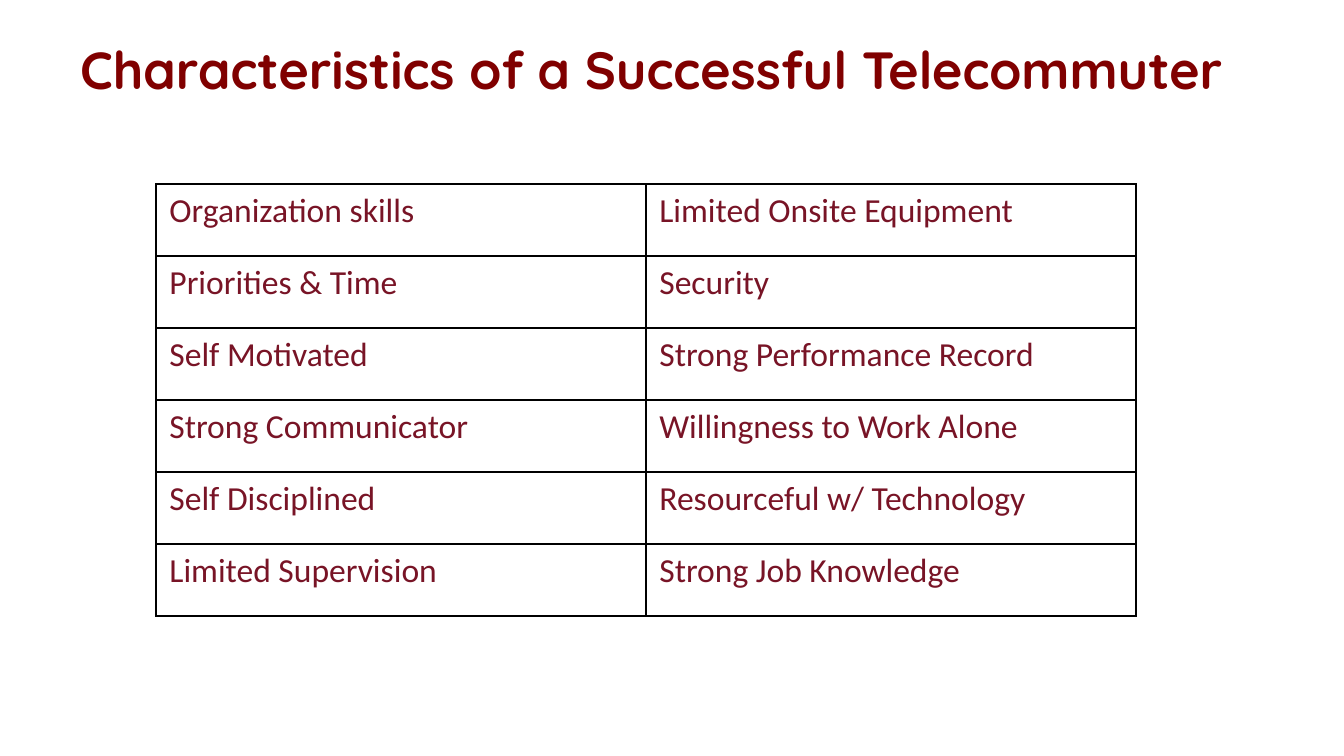
from lxml import etree
from pptx import Presentation
from pptx import util as u
from pptx.dml.color import RGBColor
from pptx.enum import text
from pptx.oxml.ns import qn

PX = 914400 / 134.4
COLORS = {"background": "FFFFFF", "title": "800000", "trait": "781426", "border": "000000"}
TRAITS = [
    ("Organization skills", "Limited Onsite Equipment"),
    ("Priorities & Time", "Security"),
    ("Self Motivated", "Strong Performance Record"),
    ("Strong Communicator", "Willingness to Work Alone"),
    ("Self Disciplined", "Resourceful w/ Technology"),
    ("Limited Supervision", "Strong Job Knowledge"),
]
COLUMN_WIDTH, ROW_HEIGHT = 490, 72


def px(length):
    return u.Emu(round(length * PX))


def color(name):
    return RGBColor.from_string(COLORS[name])


def add_run(paragraph, words, font_name, size, color_name, bold=False):
    run = paragraph.add_run()
    run.text = words
    run.font.name = font_name
    run.font.size = u.Pt(size)
    run.font.bold = bold
    run.font.color.rgb = color(color_name)


def add_title(slide, words):
    title = slide.shapes.add_textbox(px(67), px(31), px(1210), px(126)).text_frame
    title.word_wrap = True
    title.vertical_anchor = text.MSO_ANCHOR.TOP
    add_run(title.paragraphs[0], words, "Quicksand", 28, "title", True)


def set_borders(cell):
    properties = cell._tc.get_or_add_tcPr()
    for position, side in enumerate(("lnL", "lnR", "lnT", "lnB")):
        border = etree.Element(qn(f"a:{side}"), w=str(u.Pt(1)))
        fill = etree.SubElement(border, qn("a:solidFill"))
        etree.SubElement(fill, qn("a:srgbClr"), val=COLORS["border"])
        properties.insert(position, border)


def add_traits(slide):
    rows, columns = len(TRAITS), len(TRAITS[0])
    traits = slide.shapes.add_table(
        rows, columns, px(156), px(184),
        px(columns * COLUMN_WIDTH), px(rows * ROW_HEIGHT)).table
    traits.first_row = False
    traits.horz_banding = False
    for column in traits.columns:
        column.width = px(COLUMN_WIDTH)
    for row, pair in zip(traits.rows, TRAITS):
        row.height = px(ROW_HEIGHT)
        for cell, trait in zip(row.cells, pair):
            cell.fill.background()
            set_borders(cell)
            add_run(cell.text_frame.paragraphs[0], trait, "Calibri", 18, "trait")


def main():
    deck = Presentation()
    deck.slide_width, deck.slide_height = px(1344), px(756)
    slide = deck.slides.add_slide(deck.slide_layouts[6])
    slide.background.fill.solid()
    slide.background.fill.fore_color.rgb = color("background")
    add_title(slide, "Characteristics of a Successful Telecommuter")
    add_traits(slide)
    deck.save("out.pptx")


if __name__ == "__main__":
    main()
